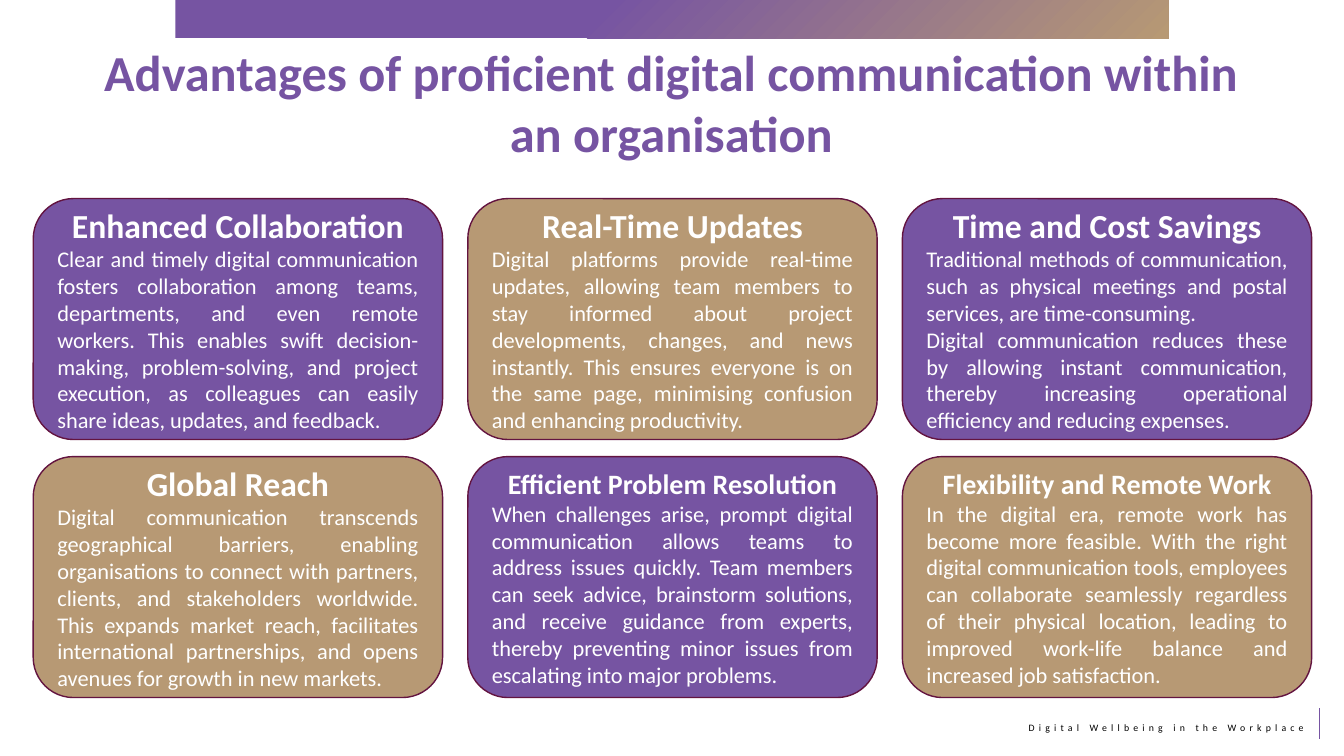
from lxml import etree
from pptx import Presentation
from pptx.dml.color import RGBColor
from pptx.enum.shapes import MSO_CONNECTOR, MSO_SHAPE
from pptx.enum.text import MSO_ANCHOR, MSO_AUTO_SIZE, PP_ALIGN
from pptx.oxml import parse_xml
from pptx.oxml.ns import nsdecls, qn
from pptx.util import Inches, Pt

ROUNDED, RECT = MSO_SHAPE.ROUNDED_RECTANGLE, MSO_SHAPE.RECTANGLE
STRAIGHT = MSO_CONNECTOR.STRAIGHT
TOP, MIDDLE = MSO_ANCHOR.TOP, MSO_ANCHOR.MIDDLE
CENTER, JUSTIFY, RIGHT = PP_ALIGN.CENTER, PP_ALIGN.JUSTIFY, PP_ALIGN.RIGHT
NO_FIT = MSO_AUTO_SIZE.NONE

COLORS = {"purple": "7654A2", "tan": "B79974", "edge": "631440",
          "white": "FFFFFF", "black": "000000"}
FONT = "Calibri"
TITLE = "Advantages of proficient digital communication within an organisation"
FOOTER = "Digital Wellbeing in the Workplace"

# heading, heading size, body paragraphs
CARDS = [
    ("Enhanced Collaboration", 24, [
        "Clear and timely digital communication fosters collaboration among teams, "
        "departments, and even remote workers. This enables swift decision-making, "
        "problem-solving, and project execution, as colleagues can easily share ideas, "
        "updates, and feedback."]),
    ("Real-Time Updates", 24, [
        "Digital platforms provide real-time updates, allowing team members to stay "
        "informed about project developments, changes, and news instantly. This ensures "
        "everyone is on the same page, minimising confusion and enhancing productivity."]),
    ("Time and Cost Savings", 24, [
        "Traditional methods of communication, such as physical meetings and postal "
        "services, are time-consuming.",
        "Digital communication reduces these by allowing instant communication, thereby "
        "increasing operational efficiency and reducing expenses."]),
    ("Global Reach", 24, [
        "Digital communication transcends geographical barriers, enabling organisations "
        "to connect with partners, clients, and stakeholders worldwide. This expands "
        "market reach, facilitates international partnerships, and opens avenues for "
        "growth in new markets."]),
    ("Efficient Problem Resolution", 20, [
        "When challenges arise, prompt digital communication allows teams to address "
        "issues quickly. Team members can seek advice, brainstorm solutions, and receive "
        "guidance from experts, thereby preventing minor issues from escalating into "
        "major problems."]),
    ("Flexibility and Remote Work", 20, [
        "In the digital era, remote work has become more feasible. With the right digital "
        "communication tools, employees can collaborate seamlessly regardless of their "
        "physical location, leading to improved work-life balance and increased job "
        "satisfaction."]),
]

COLUMNS = 3
CARD_LEFT, CARD_TOP, CARD_W, CARD_H = 0.33, 1.97, 4.06, 2.39
STEP_X, STEP_Y = 4.31, 2.56
TEXT_INSET = 0.14


def rgb(name):
    return RGBColor.from_string(COLORS[name])


def box(left, top, width, height):
    return [Inches(v) for v in (left, top, width, height)]


def write(p, text, size, color, align, bold=False):
    p.alignment = align
    r = p.add_run()
    r.text = text
    for name, value in {"name": FONT, "size": Pt(size), "bold": bold}.items():
        setattr(r.font, name, value)
    r.font.color.rgb = rgb(color)
    return r


def add_banner(slide):
    """Top strip with a gradient spreading from its lower right corner."""
    sp = slide.shapes.add_shape(RECT, *box(1.74, 0, 9.85, 0.38))
    sp.shadow.inherit = False
    sp.line.fill.background()
    gradient = parse_xml(
        f'<a:gradFill {nsdecls("a")} rotWithShape="1"><a:gsLst>'
        f'<a:gs pos="0"><a:srgbClr val="{COLORS["tan"]}"/></a:gs>'
        f'<a:gs pos="58000"><a:srgbClr val="{COLORS["purple"]}"/></a:gs></a:gsLst>'
        '<a:path path="circle"><a:fillToRect l="100000" t="100000"/></a:path>'
        '</a:gradFill>')
    sp._element.spPr.find(qn("a:prstGeom")).addnext(gradient)


def add_title(slide):
    title = slide.shapes.title
    title.left, title.top, title.width, title.height = box(0.93, 0.36, 11.46, 0.88)
    tf = title.text_frame
    for name, value in {"word_wrap": True, "auto_size": NO_FIT,
                        "vertical_anchor": TOP}.items():
        setattr(tf, name, value)
    p = tf.paragraphs[0]
    p.space_before = Pt(0)
    write(p, TITLE, 36, "purple", CENTER, bold=True)


def add_footer(slide):
    tf = slide.shapes.add_textbox(*box(9.68, 7.11, 3.35, 0.22)).text_frame
    tf.word_wrap = True
    r = write(tf.paragraphs[0], FOOTER, 7, "black", RIGHT)
    r.font._element.set("spc", "300")
    rule = slide.shapes.add_connector(STRAIGHT, Inches(13.09), Inches(7.33),
                                      Inches(13.09), Inches(7.02))
    rule.line.color.rgb = rgb("purple")
    rule.line.width = Pt(0.75)
    etree.SubElement(rule._element.spPr, qn("a:effectLst"))


def add_card(slide, index, heading, size, body):
    row, column = divmod(index, COLUMNS)
    left, top = CARD_LEFT + column * STEP_X, CARD_TOP + row * STEP_Y
    shapes = slide.shapes.add_group_shape().shapes

    sp = shapes.add_shape(ROUNDED, *box(left, top, CARD_W, CARD_H))
    sp.shadow.inherit = False
    sp.fill.solid()
    sp.fill.fore_color.rgb = rgb("tan" if index % 2 else "purple")
    sp.line.color.rgb = rgb("edge")
    sp.line.width = Pt(1)

    tf = shapes.add_textbox(*box(left + TEXT_INSET, top,
                                 CARD_W - 2 * TEXT_INSET, CARD_H)).text_frame
    tf.word_wrap = True
    tf.vertical_anchor = MIDDLE
    write(tf.paragraphs[0], heading, size, "white", CENTER, bold=True)
    for text in body:
        write(tf.add_paragraph(), text, 16, "white", JUSTIFY)


def main():
    prs = Presentation()
    prs.slide_width, prs.slide_height = Inches(13.33), Inches(7.5)
    slide = prs.slides.add_slide(prs.slide_layouts[5])
    add_footer(slide)
    add_banner(slide)
    add_title(slide)
    for index, card in enumerate(CARDS):
        add_card(slide, index, *card)
    prs.save("out.pptx")


if __name__ == "__main__":
    main()
